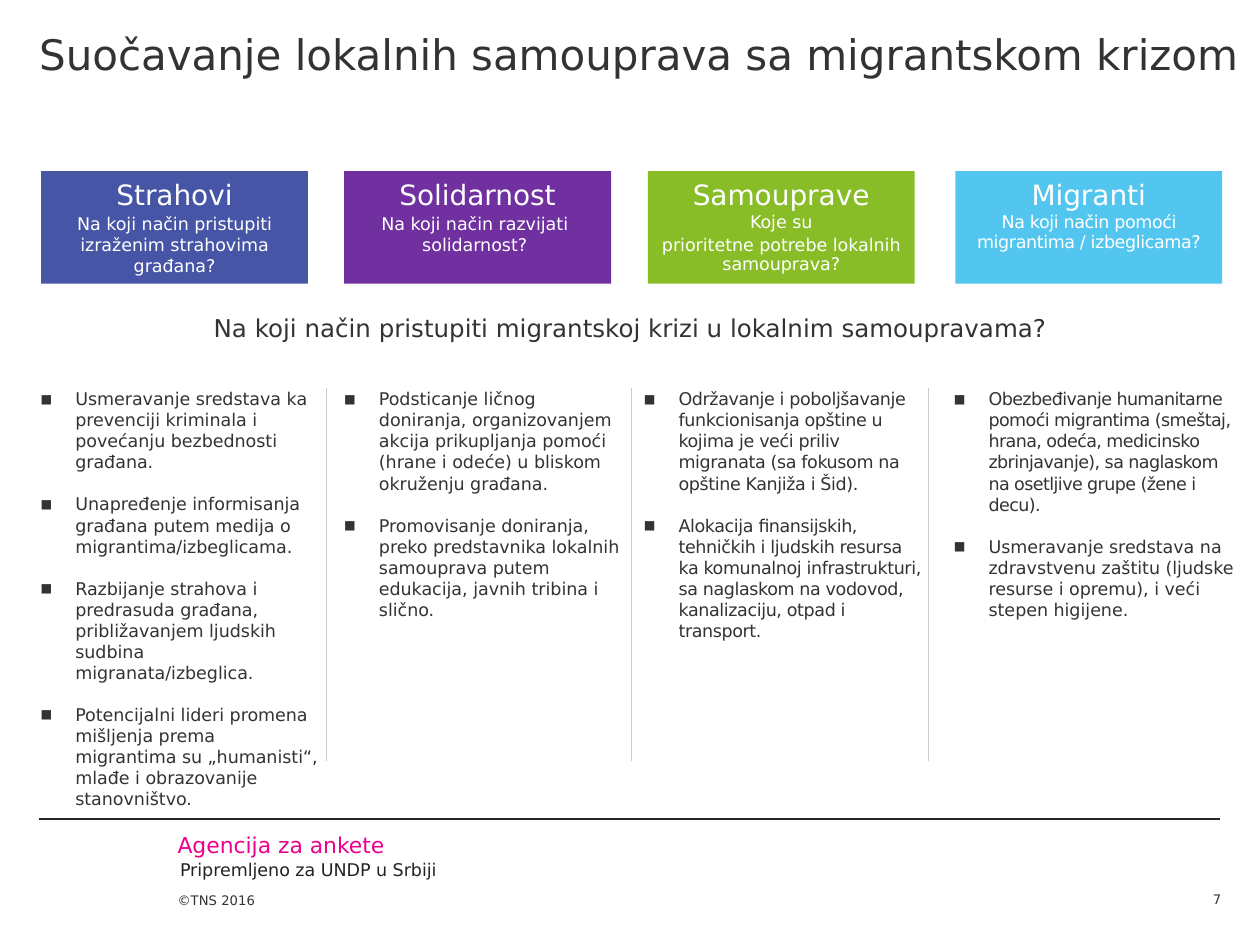
from lxml import etree
from pptx import Presentation
from pptx.dml.color import RGBColor
from pptx.enum.shapes import MSO_CONNECTOR, MSO_SHAPE
from pptx.enum.text import MSO_ANCHOR, PP_ALIGN
from pptx.oxml.ns import qn
from pptx.util import Cm, Pt

LEFT, CENTER, RIGHT = PP_ALIGN.LEFT, PP_ALIGN.CENTER, PP_ALIGN.RIGHT
TOP, BOTTOM = MSO_ANCHOR.TOP, MSO_ANCHOR.BOTTOM
RECT, STRAIGHT = MSO_SHAPE.RECTANGLE, MSO_CONNECTOR.STRAIGHT
FONT = "DejaVu Sans"
COLORS = {
    "text": "333333", "white": "FFFFFF", "pink": "EC008C", "client": "232323",
    "rule": "262626", "divider": "CCCCCC", "blue": "4655A5",
    "purple": "7030A0", "green": "89BD27", "sky": "53C6EF",
}

TITLE = "Suočavanje lokalnih samouprava sa migrantskom krizom"
QUESTION = "Na koji način pristupiti migrantskoj krizi u lokalnim samoupravama?"

# card and body: left, width in cm; spacing: letter spacing of each bullet in points
COLUMNS = [
    {"name": "Strahovi", "color": "blue", "card": 0.83, "sub": 0.83,
     "body": (0.82, 5.61), "height": 11.12, "line": 12, "sub_spacing": 0,
     "question": ["Na koji način pristupiti izraženim strahovima građana?"],
     "spacing": (0, 0, 0, 0),
     "bullets": [
         "Usmeravanje sredstava ka prevenciji kriminala i povećanju bezbednosti građana.",
         "Unapređenje informisanja građana putem medija o migrantima/izbeglicama.",
         "Razbijanje strahova i predrasuda građana, približavanjem ljudskih sudbina "
         "migranata/izbeglica.",
         "Potencijalni lideri promena mišljenja prema migrantima su „humanisti“, "
         "mlađe i obrazovanije stanovništvo."]},
    {"name": "Solidarnost", "color": "purple", "card": 6.94, "sub": 6.88,
     "body": (6.94, 5.57), "height": 7.26, "line": None, "sub_spacing": 0,
     "question": ["Na koji način razvijati solidarnost?"],
     "spacing": (0, 0),
     "bullets": [
         "Podsticanje ličnog doniranja, organizovanjem akcija prikupljanja pomoći "
         "(hrane i odeće) u bliskom okruženju građana.",
         "Promovisanje doniranja, preko predstavnika lokalnih samouprava putem "
         "edukacija, javnih tribina i slično."]},
    {"name": "Samouprave", "color": "green", "card": 13.06, "sub": 13.06,
     "body": (12.98, 5.61), "height": 6.83, "line": 11, "sub_spacing": 0,
     "question": ["Koje su", "prioritetne potrebe lokalnih samouprava?"],
     "spacing": (-0.2, -0.2),
     "bullets": [
         "Održavanje i poboljšavanje funkcionisanja opštine u kojima je veći priliv "
         "migranata (sa fokusom na opštine Kanjiža i Šid).",
         "Alokacija finansijskih, tehničkih i ljudskih resursa ka komunalnoj "
         "infrastrukturi, sa naglaskom na vodovod, kanalizaciju, otpad i transport."]},
    {"name": "Migranti", "color": "sky", "card": 19.26, "sub": 19.26,
     "body": (19.23, 5.69), "height": 4.7, "line": 11, "sub_spacing": -0.2,
     "question": ["Na koji način pomoći migrantima / izbeglicama?"],
     "spacing": (-0.3, 0),
     "bullets": [
         "Obezbeđivanje humanitarne pomoći migrantima (smeštaj, hrana, odeća, medicinsko "
         "zbrinjavanje), sa naglaskom na osetljive grupe (žene i decu).",
         "Usmeravanje sredstava na zdravstvenu zaštitu (ljudske resurse i opremu), "
         "i veći stepen higijene."]},
]
CARD_TOP, CARD_W, CARD_H = 3.45, 5.38, 2.27
CARD_INSETS = (0, 0.2, 0, 0.13)
BODY_TOP, DIVIDER_BOTTOM = 7.83, 15.35
DIVIDERS = [6.58, 12.73, 18.72]
INDENT = 0.7


def rgb(name):
    return RGBColor.from_string(COLORS[name])


def add_bullet(p):
    pPr = p._p.get_or_add_pPr()
    pPr.set("marL", str(Cm(INDENT)))
    pPr.set("indent", str(-Cm(INDENT)))
    for tag, key, value in (("a:buSzPct", "val", "70000"),
                            ("a:buFont", "typeface", FONT),
                            ("a:buChar", "char", "■")):
        etree.SubElement(pPr, qn(tag)).set(key, value)


def add_text(slide, box, paragraphs, size=10, color="text", align=LEFT, anchor=TOP,
             insets=(0, 0, 0, 0), line=None, before=0, after=0, bullet=False,
             spacing=()):
    s = slide.shapes.add_textbox(*map(Cm, box))
    tf = s.text_frame
    tf.word_wrap = True
    tf.vertical_anchor = anchor
    tf.margin_left, tf.margin_top, tf.margin_right, tf.margin_bottom = map(Cm, insets)
    for i, text in enumerate(paragraphs):
        p = tf.add_paragraph() if i else tf.paragraphs[0]
        if bullet:
            add_bullet(p)
        p.alignment = align
        p.space_before = Pt(before if i else 0)
        p.space_after = Pt(after)
        if line:
            p.line_spacing = Pt(line)
        r = p.add_run()
        r.text = text
        r.font.size, r.font.name = Pt(size), FONT
        r.font.color.rgb = rgb(color)
        if spacing and spacing[i]:
            r._r.get_or_add_rPr().set("spc", str(round(spacing[i] * 100)))


def add_line(slide, x1, y1, x2, y2, color, width):
    c = slide.shapes.add_connector(STRAIGHT, Cm(x1), Cm(y1), Cm(x2), Cm(y2))
    c.line.color.rgb = rgb(color)
    c.line.width = Pt(width)
    etree.SubElement(c._element.spPr, qn("a:effectLst"))


def add_column(slide, col):
    card = slide.shapes.add_shape(RECT, Cm(col["card"]), Cm(CARD_TOP),
                                  Cm(CARD_W), Cm(CARD_H))
    card.shadow.inherit = False
    card.fill.solid()
    card.fill.fore_color.rgb = rgb(col["color"])
    card.line.fill.background()
    on_card = {"color": "white", "align": CENTER, "insets": CARD_INSETS}
    add_text(slide, (col["card"], CARD_TOP - 0.07, CARD_W, 1.17), [col["name"]],
             size=16, **on_card)
    add_text(slide, (col["sub"], CARD_TOP + 0.65, CARD_W, 1.42), col["question"],
             line=col["line"], before=2,
             spacing=[col["sub_spacing"]] * len(col["question"]), **on_card)
    left, width = col["body"]
    add_text(slide, (left, BODY_TOP, width, col["height"]), col["bullets"],
             after=12, bullet=True, spacing=col["spacing"])


def main():
    prs = Presentation()
    prs.slide_width, prs.slide_height = Cm(25.4), Cm(19.05)
    slide = prs.slides.add_slide(prs.slide_layouts[6])

    add_text(slide, (0.79, 0, 24.36, 2.87), [TITLE], size=24, insets=(0, 0.58, 0, 0))
    add_text(slide, (0.81, 6.17, 23.8, 0.89), [QUESTION], size=14, align=CENTER,
             insets=(0.28, 0.15, 0.28, 0.15))
    for x in DIVIDERS:
        add_line(slide, x, BODY_TOP, x, DIVIDER_BOTTOM, "divider", 0.25)
    for col in COLUMNS:
        add_column(slide, col)

    add_line(slide, 0.79, 16.51, 24.59, 16.51, "rule", 0.75)
    add_text(slide, (3.58, 16.76, 8.41, 0.53), ["Agencija za ankete"], size=12.5,
             color="pink")
    add_text(slide, (3.63, 17.31, 17.3, 0.45), ["Pripremljeno za UNDP u Srbiji"],
             color="client")
    add_text(slide, (3.58, 17.58, 2.11, 0.73), ["©TNS 2016"], size=7.5, anchor=BOTTOM)
    add_text(slide, (23.22, 17.58, 1.4, 0.71), ["7"], size=7.5, align=RIGHT,
             anchor=BOTTOM)
    prs.save("out.pptx")


if __name__ == "__main__":
    main()
